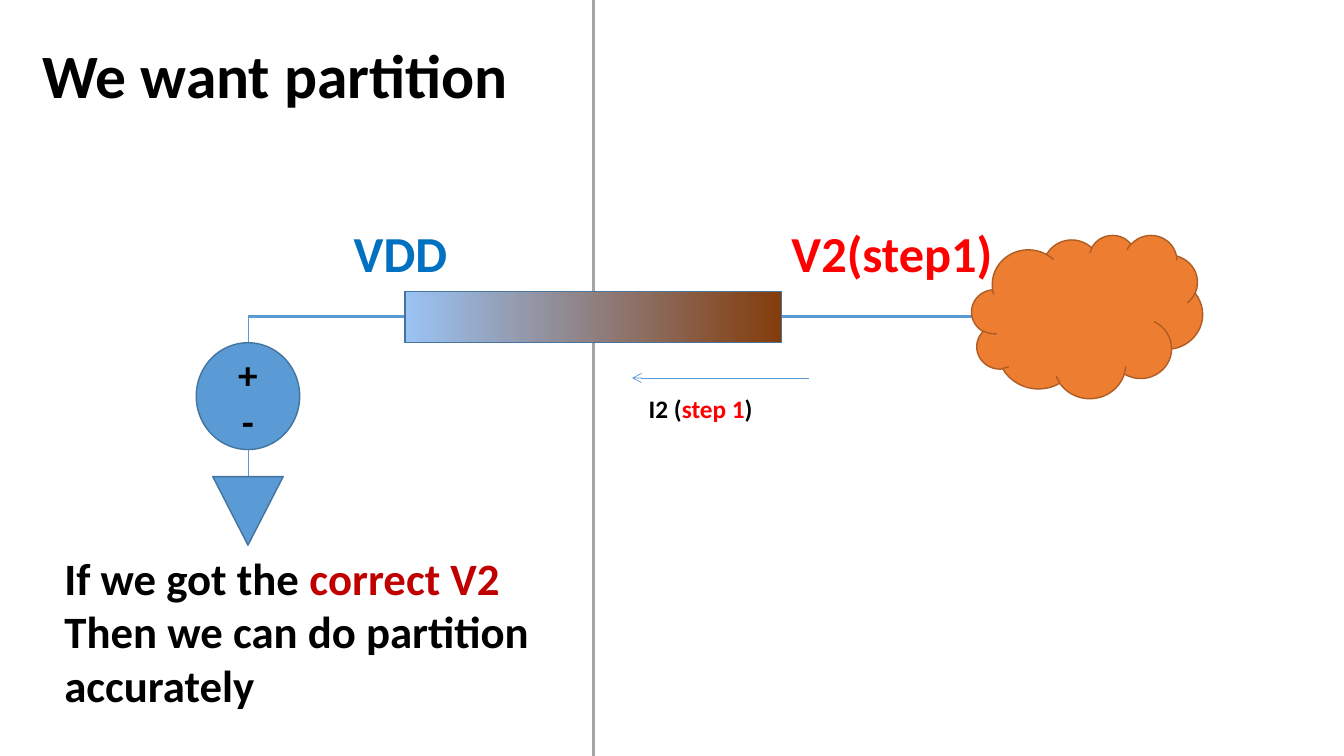
import pptx
import pptx.dml.color
import pptx.enum.shapes
import pptx.enum.text
import pptx.oxml.ns
import pptx.util
from lxml import etree

Shape = pptx.enum.shapes.MSO_SHAPE
Align = pptx.enum.text.PP_ALIGN
WIDTH, HEIGHT = pptx.util.Inches(13.33), pptx.util.Inches(7.5)
COLORS = {
    "black": "000000", "blue": "5B9BD5", "edge": "43739E", "gray": "A5A5A5",
    "sky": "9AC3F5", "brown": "843C0B", "orange": "ED7D31", "rust": "AF5C24",
    "label": "0070C0", "red": "FF0000", "dark": "C00000",
}


def color(name):
    return pptx.dml.color.RGBColor.from_string(COLORS[name])


def across(cols):
    return round(WIDTH * cols / 100)


def down(rows):
    return round(HEIGHT * rows / 100)


def place(x, y, w, h):
    """Turn cells of a grid of 100 columns by 100 rows into slide lengths."""
    return across(x), down(y), across(w), down(h)


def add_line(slide, start, end, name, width):
    line = slide.shapes.add_connector(
        pptx.enum.shapes.MSO_CONNECTOR.STRAIGHT,
        across(start[0]), down(start[1]), across(end[0]), down(end[1]))
    line.line.color.rgb = color(name)
    line.line.width = pptx.util.Pt(width)
    etree.SubElement(line._element.spPr, pptx.oxml.ns.qn("a:effectLst"))
    return line


def add_part(slide, kind, box, fill, edge):
    part = slide.shapes.add_shape(kind, *place(*box))
    part.shadow.inherit = False
    part.line.color.rgb = color(edge)
    part.line.width = pptx.util.Pt(1)
    if fill:
        part.fill.solid()
        part.fill.fore_color.rgb = color(fill)
    return part


def add_text(slide, box, size, lines, align=Align.LEFT):
    """Write lines, each a list of (words, color name) pairs."""
    frame = slide.shapes.add_textbox(*place(*box)).text_frame
    frame.word_wrap = False
    frame.auto_size = pptx.enum.text.MSO_AUTO_SIZE.SHAPE_TO_FIT_TEXT
    for i, line in enumerate(lines):
        para = frame.add_paragraph() if i else frame.paragraphs[0]
        para.alignment = align
        para.font.name = "Calibri"
        para.font.size = pptx.util.Pt(size)
        para.font.bold = True
        for words, name in line:
            run = para.add_run()
            run.text = words
            run.font.color.rgb = color(name)


def draw_rail(slide, x, y, w, h):
    """Draw the wire, its resistor, the load cloud and the node labels."""
    wire = y + 0.55 * h
    add_line(slide, (x, wire), (x + w, wire), "blue", 2.25)
    bar = add_part(slide, Shape.RECTANGLE,
                   (x + 11.7, wire - 3.34, 28, 6.8), None, "edge")
    bar.fill.gradient()
    bar.fill.gradient_angle = 0
    for stop, name in zip(bar.fill.gradient_stops, ("sky", "brown")):
        stop.color.rgb = color(name)
    add_part(slide, Shape.CLOUD, (x + w - 0.1, y + 0.1 * h, 17.18, 0.9 * h),
             "orange", "rust")
    add_text(slide, (x + 7.13, y, 8.55, 9.47), 36, [[("VDD", "label")]])
    add_text(slide, (x + 39.7, y, 16.65, 9.47), 36, [[("V2(step1)", "red")]])


def draw_source(slide, x, y, w, h):
    """Draw the voltage source hanging from the wire, with its ground."""
    mid, ground = x + w / 2, y + 0.7 * h
    add_line(slide, (mid, y), (mid, ground), "blue", 0.5)
    add_part(slide, Shape.OVAL, (x, y + 3.47, w, 14.13), "blue", "edge")
    add_text(slide, (mid - 1.5, y + 3.87, 3, 13.87), 28,
             [[("+", "black")], [("-", "black")]], Align.CENTER)
    tip = add_part(slide, Shape.ISOSCELES_TRIANGLE,
                   (mid - 2.62, ground, 5.24, 0.3 * h), "blue", "edge")
    tip.rotation = 180


def draw_current(slide, x, y, w, h):
    arrow = add_line(slide, (x + w, y), (x, y), "blue", 0.5)
    ends = arrow.line._get_or_add_ln()
    etree.SubElement(ends, pptx.oxml.ns.qn("a:tailEnd"), type="arrow")
    add_text(slide, (x + 0.5, y + 0.2 * h, 0.7 * w, 0.8 * h), 18,
             [[("I2 (", "black"), ("step 1", "red"), (")", "black")]])


def draw_words(slide, x, y, w, h):
    """Write the title at the top of the box and the remark at its foot."""
    add_text(slide, (x, y, w, 11.2), 44, [[("We want partition", "black")]])
    add_text(slide, (x + 1.65, y + h - 22.93, 36.45, 22.93), 32, [
        [("If we got the ", "black"), ("correct V2", "dark")],
        [("Then we can do partition", "black")],
        [("accurately", "black")],
    ])


def main():
    deck = pptx.Presentation()
    deck.slide_width, deck.slide_height = WIDTH, HEIGHT
    slide = deck.slides.add_slide(deck.slide_layouts[6])
    add_line(slide, (44.17, 0), (44.17, 100), "gray", 2.25)
    draw_rail(slide, 18.45, 28.67, 53.95, 24)
    draw_source(slide, 14.6, 41.87, 7.7, 30.24)
    draw_current(slide, 47.03, 50, 13.2, 6.67)
    draw_words(slide, 2.4, 4.27, 37.6, 90.8)
    deck.save("out.pptx")


if __name__ == "__main__":
    main()
